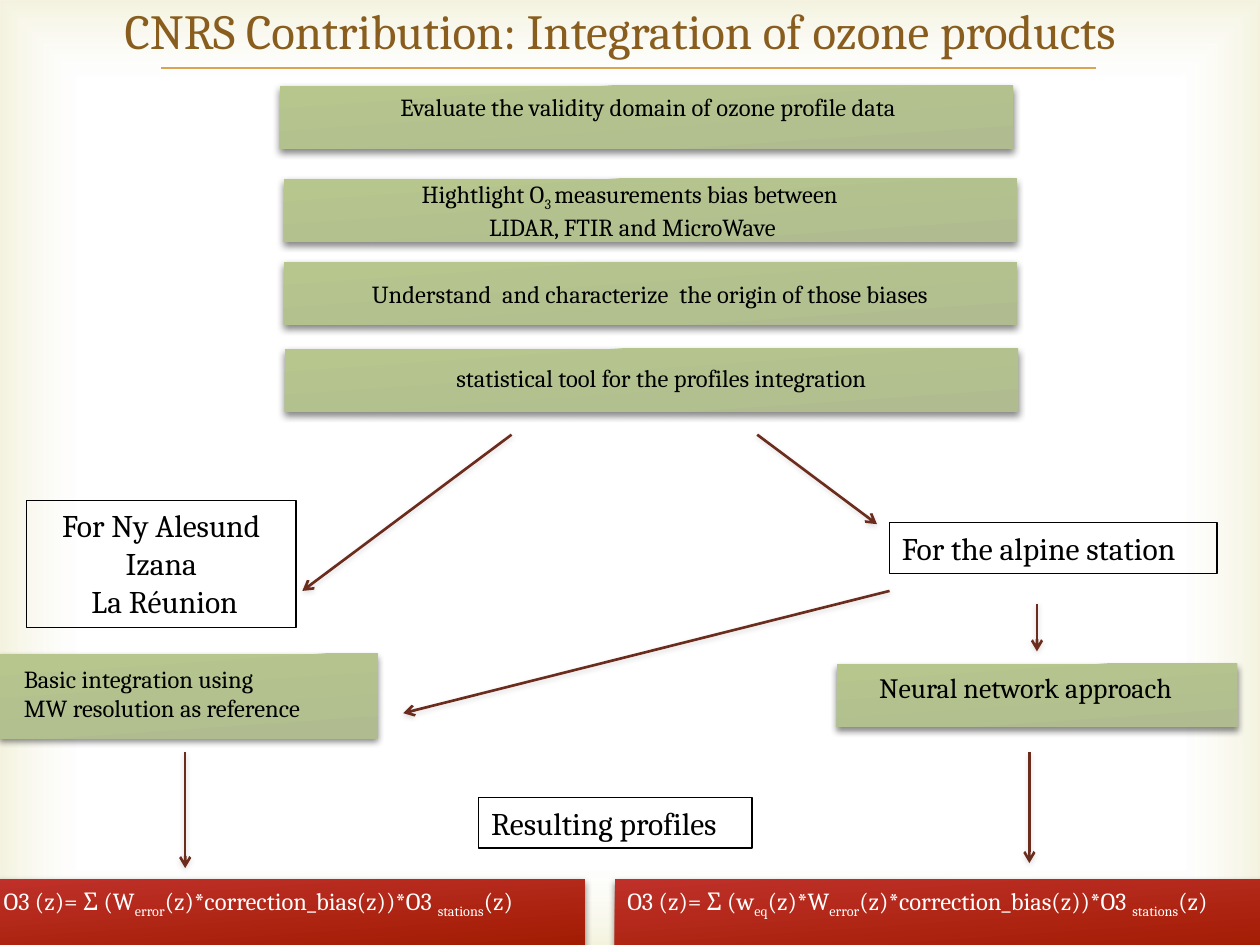
import pptx
import pptx.util
import pptx.dml.color
import pptx.enum.shapes
import pptx.enum.text
import pptx.oxml
import pptx.oxml.ns
from pptx.util import Inches

FONT = "Cambria"
BLACK, WHITE = "000000", "FFFFFF"
GREEN, RED = ("B7C68D", "B0BC90"), ("BE3029", "A01B00")
BROWN, GOLD, TITLE = "6B2B1D", "DBA455", "895D1D"
LEFT = pptx.enum.text.PP_ALIGN.LEFT
CENTER = pptx.enum.text.PP_ALIGN.CENTER
TOP = pptx.enum.text.MSO_ANCHOR.TOP
MIDDLE = pptx.enum.text.MSO_ANCHOR.MIDDLE
RECTANGLE = pptx.enum.shapes.MSO_SHAPE.RECTANGLE
STRAIGHT = pptx.enum.shapes.MSO_CONNECTOR.STRAIGHT
NAMESPACE = pptx.oxml.ns.nsdecls("a")


def color(value):
    return pptx.dml.color.RGBColor.from_string(value)


def shadow_effect(alpha, blur, distance):
    return pptx.oxml.parse_xml(
        f'<a:effectLst {NAMESPACE}><a:outerShdw blurRad="{pptx.util.Pt(blur)}" '
        f'dist="{pptx.util.Pt(distance)}" dir="5400000" rotWithShape="0">'
        f'<a:srgbClr val="{BLACK}"><a:alpha val="{alpha * 1000}"/></a:srgbClr>'
        "</a:outerShdw></a:effectLst>")


class SlideBuilder:
    def __init__(self, page):
        self.page = page
        self.shapes = page.shapes

    def glow(self, width, height):
        shape = self.shapes.add_shape(RECTANGLE, 0, 0, width, height)
        shape.shadow.inherit = False
        shape.line.fill.background()
        shape.fill.background()
        properties = shape.element.spPr
        empty_fill = properties.find(pptx.oxml.ns.qn("a:noFill"))
        properties.replace(empty_fill, pptx.oxml.parse_xml(
            f'<a:gradFill {NAMESPACE}><a:gsLst>'
            '<a:gs pos="83000"><a:srgbClr val="FFFFFF"><a:alpha val="11000"/></a:srgbClr></a:gs>'
            '<a:gs pos="100000"><a:srgbClr val="D1CA75"><a:alpha val="23000"/></a:srgbClr></a:gs>'
            '</a:gsLst><a:path path="rect"><a:fillToRect l="50000" t="50000" '
            'r="50000" b="50000"/></a:path></a:gradFill>'))
        self.shapes.element.insert(2, shape.element)

    def add_text(self, shape, lines, size, ink=BLACK, align=LEFT, anchor=TOP, wrap=True):
        frame = shape.text_frame
        frame.word_wrap = wrap
        frame.auto_size = pptx.enum.text.MSO_AUTO_SIZE.NONE
        frame.vertical_anchor = anchor
        for index, line in enumerate(lines):
            para = frame.add_paragraph() if index else frame.paragraphs[0]
            para.alignment = align
            for position, text in enumerate(line.split("|")):
                span = para.add_run()
                span.text = text
                span.font.name = FONT
                span.font.size = pptx.util.Pt(size)
                span.font.color.rgb = color(ink)
                if position % 2:
                    span._r.get_or_add_rPr().set("baseline", "-25000")

    def title(self, area, text):
        shape = self.shapes.title
        shape.left, shape.top, shape.width, shape.height = map(Inches, area)
        self.add_text(shape, [text], 28, TITLE, CENTER, MIDDLE)

    def panel(self, area, colors=GREEN):
        shape = self.shapes.add_shape(RECTANGLE, *map(Inches, area))
        shape.line.fill.background()
        shape.fill.gradient()
        shape.fill.gradient_angle = 274
        for stop, value in zip(shape.fill.gradient_stops, colors):
            stop.color.rgb = color(value)
        shape.element.spPr.append(shadow_effect(48, 4, 2))
        return shape

    def label(self, area, lines, size, align=LEFT, wrap=True, framed=False):
        box = self.shapes.add_textbox(*map(Inches, area))
        if framed:
            box.line.color.rgb = color(BLACK)
            box.line.width = pptx.util.Pt(0.75)
        self.add_text(box, lines, size, align=align, wrap=wrap)

    def line(self, start, end, ink, width):
        connector = self.shapes.add_connector(STRAIGHT, *map(Inches, start + end))
        connector.line.color.rgb = color(ink)
        connector.line.width = pptx.util.Pt(width)
        return connector

    def rule(self, start, end):
        connector = self.line(start, end, GOLD, 1)
        connector.element.spPr.append(pptx.oxml.parse_xml(f"<a:effectLst {NAMESPACE}/>"))

    def arrow(self, start, end):
        connector = self.line(start, end, BROWN, 1.5)
        properties = connector.element.spPr
        properties.find(pptx.oxml.ns.qn("a:ln")).append(
            pptx.oxml.parse_xml(f'<a:tailEnd {NAMESPACE} type="arrow"/>'))
        properties.append(shadow_effect(15, 3, 1))


def main():
    deck = pptx.Presentation()
    deck.slide_width, deck.slide_height = Inches(10), Inches(7.5)
    builder = SlideBuilder(deck.slides.add_slide(deck.slide_layouts[5]))
    builder.glow(deck.slide_width, deck.slide_height)
    builder.title((0.42, -0.09, 9, 0.66), "CNRS Contribution: Integration of ozone products")

    for start, end in (
        ((4.06, 3.45), (2.4, 4.69)),
        ((6.01, 3.45), (6.96, 4.16)),
        ((7.06, 4.69), (3.2, 5.66)),
        ((8.23, 4.79), (8.23, 5.17)),
        ((1.47, 5.97), (1.47, 6.89)),
        ((8.17, 5.97), (8.17, 6.85)),
    ):
        builder.arrow(start, end)

    builder.label((7.06, 4.15, 2.6, 0.4), ["For the alpine station"], 18, framed=True)
    builder.label((0.21, 3.97, 2.14, 1.01), ["For Ny Alesund", "Izana", " La Réunion"], 18,
                  CENTER, framed=True)

    for area, formula in (
        ((-0.07, 6.98, 4.71, 0.57),
         "O3 (z)= Σ (W|error|(z)*correction_bias(z))*O3 |stations|(z)"),
        ((4.88, 6.98, 6.12, 0.57),
         "O3 (z)= Σ (w|eq|(z)*W|error|(z)*correction_bias(z))*O3 |stations|(z)"),
    ):
        builder.add_text(builder.panel(area, RED), [formula], 14, WHITE)

    builder.rule((5.4, 0.54), (1.28, 0.54))
    builder.rule((8.7, 0.54), (5.28, 0.54))

    builder.panel((2.22, 0.68, 5.82, 0.5))
    builder.label((2.25, 0.68, 5.79, 0.34),
                  ["Evaluate the validity domain of ozone profile data"], 14, CENTER)
    builder.panel((2.25, 1.42, 5.82, 0.5))
    builder.label((2.52, 1.37, 5, 0.57),
                  ["Hightlight O|3 |measurements bias between ", "LIDAR, FTIR and MicroWave"],
                  14, CENTER)
    builder.add_text(builder.panel((2.25, 2.08, 5.82, 0.5)),
                     ["Understand  and characterize  the origin of those biases"], 14,
                     align=CENTER, anchor=MIDDLE)
    builder.panel((2.26, 2.77, 5.82, 0.5))
    builder.label((3.38, 2.83, 3.74, 0.34),
                  ["statistical tool for the profiles integration"], 14, CENTER, wrap=False)
    builder.panel((6.64, 5.27, 3.18, 0.5))
    builder.label((6.88, 5.27, 2.54, 0.37), ["Neural network approach"], 16, wrap=False)
    builder.panel((-0.01, 5.19, 3.01, 0.67))
    builder.label((0.09, 5.22, 2.58, 0.57),
                  ["Basic integration using", "MW resolution as reference"], 14, wrap=False)
    builder.label((3.8, 6.33, 2.17, 0.4), ["Resulting profiles"], 18, wrap=False, framed=True)

    deck.save("out.pptx")


if __name__ == "__main__":
    main()
